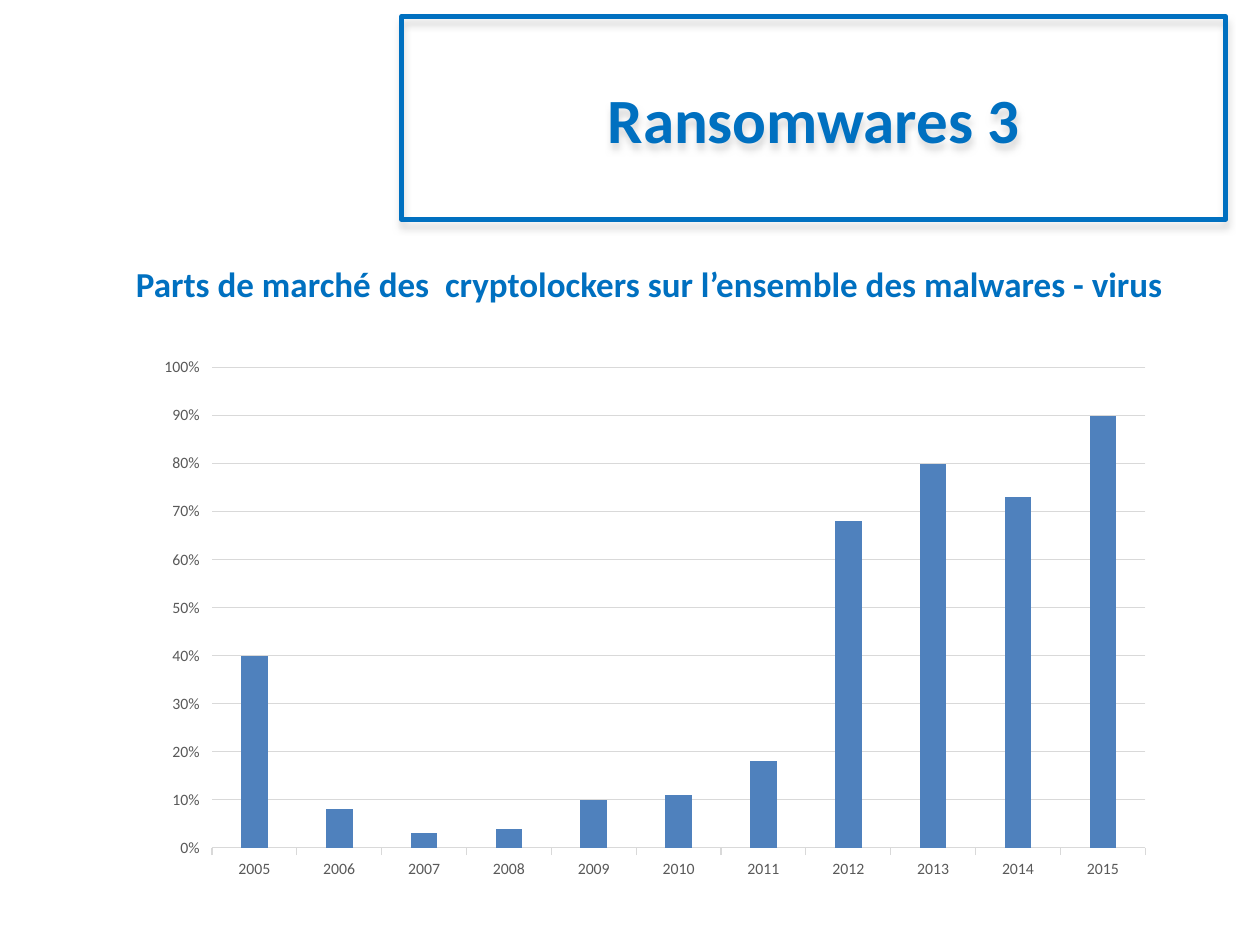
from lxml import etree
from pptx import Presentation
from pptx import util as u
from pptx.chart import data
from pptx.dml import color
from pptx.enum import chart as ec, text
from pptx.oxml import ns

hues = {"blue": "0070C0", "bar": "4F81BD", "grid": "D9D9D9", "label": "595959"}
face = "Calibri"


def rgb(name):
    return color.RGBColor.from_string(hues[name])


def style(font, size, hue, bold=False):
    font.name = face
    font.size = u.Pt(size)
    font.bold = bold
    font.color.rgb = rgb(hue)


deck = Presentation()
deck.slide_width, deck.slide_height = u.Cm(25.4), u.Cm(19.05)
slide = deck.slides.add_slide(deck.slide_layouts[5])

title = slide.shapes.title
title.left, title.top = u.Cm(8.1), u.Cm(0.33)
title.width, title.height = u.Cm(16.61), u.Cm(4.09)
title.line.color.rgb = rgb("blue")
title.line.width = u.Pt(3)
frame = title.text_frame
frame.text = "Ransomwares 3"
frame.vertical_anchor = text.MSO_ANCHOR.MIDDLE
frame.paragraphs[0].alignment = text.PP_ALIGN.CENTER
style(frame.paragraphs[0].runs[0].font, 36, "blue", True)

fx = etree.SubElement(title.element.spPr, ns.qn("a:effectLst"))
shade = etree.SubElement(fx, ns.qn("a:outerShdw"), blurRad=str(u.Pt(4)),
                         dist=str(u.Pt(4)), dir="5400000", rotWithShape="0")
etree.SubElement(shade, ns.qn("a:srgbClr"), val=hues["grid"])

years = [str(year) for year in range(2005, 2016)]
parts = [0.4, 0.08, 0.03, 0.04, 0.1, 0.11, 0.18, 0.68, 0.8, 0.73, 0.9]
table = data.CategoryChartData(number_format="0%")
table.categories = years
table.add_series("Parts de marché", parts)
chart = slide.shapes.add_chart(
    ec.XL_CHART_TYPE.COLUMN_CLUSTERED,
    u.Cm(2.9), u.Cm(7.01), u.Cm(20.6), u.Cm(10.92), table).chart
chart.has_title = False
chart.has_legend = False
chart.font.name = face
chart.font.size = u.Pt(10)

plot = chart.plots[0]
plot.gap_width = 219
plot.overlap = -27
plot.vary_by_categories = False
bars = plot.series[0].format.fill
bars.solid()
bars.fore_color.rgb = rgb("bar")

cat, val = chart.category_axis, chart.value_axis
for axis in (cat, val):
    style(axis.tick_labels.font, 9, "label")
    axis.major_tick_mark = ec.XL_TICK_MARK.OUTSIDE
    axis.minor_tick_mark = ec.XL_TICK_MARK.NONE
val.minimum_scale, val.maximum_scale, val.major_unit = 0, 1, 0.1
val.tick_labels.number_format = "0%"
val.tick_labels.number_format_is_linked = False
val.format.line.fill.background()
val.has_major_gridlines = True
for line in (cat.format.line, val.major_gridlines.format.line):
    line.color.rgb = rgb("grid")
    line.width = u.Pt(0.75)

box = slide.shapes.add_textbox(u.Cm(2.49), u.Cm(5.16), u.Cm(21.39), u.Cm(1.12))
frame = box.text_frame
frame.text = "Parts de marché des  cryptolockers sur l’ensemble des malwares - virus"
frame.word_wrap = False
frame.auto_size = text.MSO_AUTO_SIZE.SHAPE_TO_FIT_TEXT
frame.paragraphs[0].alignment = text.PP_ALIGN.JUSTIFY
style(frame.paragraphs[0].runs[0].font, 20, "blue", True)

deck.save("out.pptx")
